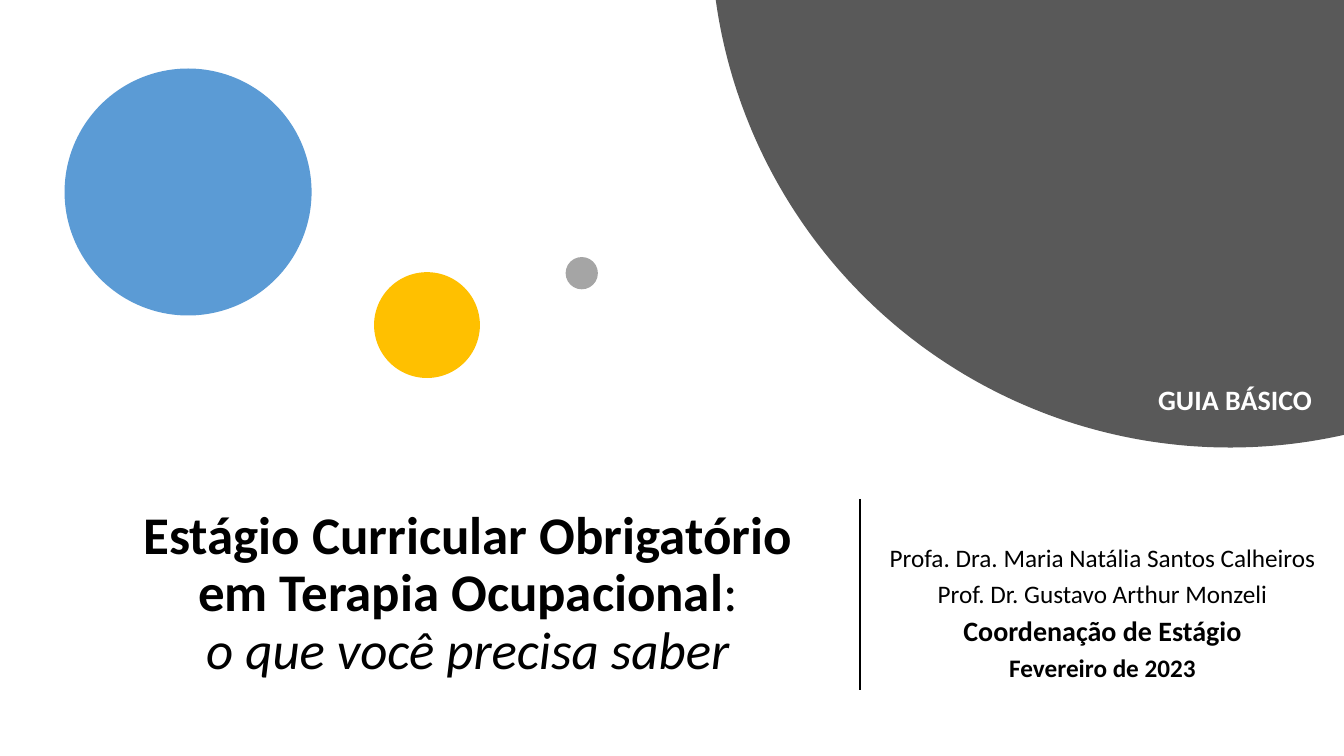
import math
from dataclasses import dataclass, field

import pptx
import pptx.dml.color
import pptx.enum.shapes
import pptx.enum.text
import pptx.oxml.ns
import pptx.shapes.base
import pptx.slide
import pptx.util
from lxml import etree

Inches = pptx.util.Inches
Pt = pptx.util.Pt
Color = pptx.dml.color.RGBColor
Anchor = pptx.enum.text.MSO_ANCHOR
Align = pptx.enum.text.PP_ALIGN


@dataclass(frozen=True)
class Theme:
    font: str = "Calibri"
    black: str = "000000"
    white: str = "FFFFFF"
    blue: str = "5B9BD5"
    gold: str = "FFC000"
    gray: str = "A5A5A5"
    dark: str = "595959"
    title: float = 37.8
    label: float = 20
    body: float = 18
    rule: float = 1.5


THEME = Theme()


@dataclass(frozen=True)
class Dot:
    left: float
    top: float
    size: float
    color: str


@dataclass(frozen=True)
class Run:
    text: str
    size: float
    color: str = THEME.black
    style: dict[str, bool] = field(default_factory=dict)


@dataclass(frozen=True)
class Block:
    left: float
    top: float
    width: float
    height: float
    lines: list[list[Run]]
    frame: dict[str, object]
    para: dict[str, object]


BOLD = {"bold": True}
MIDDLE = {"word_wrap": True, "vertical_anchor": Anchor.MIDDLE}
DOTS = [
    Dot(0.64, 0.68, 2.45, THEME.blue),
    Dot(3.71, 2.7, 1.05, THEME.gold),
    Dot(5.61, 2.55, 0.32, THEME.gray),
]
BLOCKS = [
    Block(
        0.92, 4.95, 7.44, 1.9,
        [[
            Run("Estágio Curricular Obrigatório em Terapia Ocupacional", THEME.title, style=BOLD),
            Run(":", THEME.title),
            Run("\n", THEME.title),
            Run("o que você precisa saber", THEME.title, style={"italic": True}),
        ]],
        MIDDLE | {"margin_left": Inches(0.15), "margin_right": Inches(0.15)},
        {"line_spacing": 0.9},
    ),
    Block(
        8.62, 5.09, 4.63, 2.01,
        [
            [Run("Profa. Dra. Maria Natália Santos Calheiros", THEME.body)],
            [Run("Prof. Dr. Gustavo Arthur Monzeli", THEME.body)],
            [Run("Coordenação de Estágio", THEME.label, style=BOLD)],
            [Run("Fevereiro de 2023", THEME.body, style=BOLD)],
        ],
        MIDDLE,
        {"line_spacing": 0.9, "space_after": Pt(6)},
    ),
    Block(
        10.75, 3.75, 3, 0.44,
        [[Run("GUIA BÁSICO", THEME.label, THEME.white, BOLD)]],
        {"word_wrap": True},
        {},
    ),
]


def apply(target: object, values: dict[str, object]) -> None:
    for name, value in values.items():
        setattr(target, name, value)


def paint(shape: pptx.shapes.base.BaseShape, color: str) -> None:
    shape.shadow.inherit = False
    shape.fill.solid()
    shape.fill.fore_color.rgb = Color.from_string(color)
    shape.line.fill.background()


def draw_dot(slide: pptx.slide.Slide, dot: Dot) -> None:
    box = map(Inches, (dot.left, dot.top, dot.size, dot.size))
    shape = slide.shapes.add_shape(pptx.enum.shapes.MSO_SHAPE.OVAL, *box)
    paint(shape, dot.color)


def draw_disc(slide: pptx.slide.Slide, mid: tuple[float, float], size: float, edge: float) -> None:
    start = math.acos((edge - mid[0]) / size)
    end = math.pi + math.asin(mid[1] / size)
    steps = 120
    turns = [start + (end - start) * step / steps for step in range(steps + 1)]
    arc = [
        (Inches(mid[0] + size * math.cos(turn)), Inches(mid[1] + size * math.sin(turn)))
        for turn in turns
    ]
    form = slide.shapes.build_freeform(Inches(edge), 0)
    form.add_line_segments(arc, close=True)
    paint(form.convert_to_shape(), THEME.dark)


def draw_rule(slide: pptx.slide.Slide, left: float, top: float, base: float) -> None:
    ends = map(Inches, (left, top, left, base))
    rule = slide.shapes.add_connector(pptx.enum.shapes.MSO_CONNECTOR.STRAIGHT, *ends)
    rule.line.color.rgb = Color.from_string(THEME.black)
    rule.line.width = Pt(THEME.rule)
    etree.SubElement(rule._element.spPr, pptx.oxml.ns.qn("a:effectLst"))


def draw_block(slide: pptx.slide.Slide, block: Block) -> None:
    box = map(Inches, (block.left, block.top, block.width, block.height))
    frame = slide.shapes.add_textbox(*box).text_frame
    apply(frame, block.frame)
    for index, line in enumerate(block.lines):
        para = frame.add_paragraph() if index else frame.paragraphs[0]
        apply(para, {"alignment": Align.CENTER} | block.para)
        for item in line:
            if item.text == "\n":
                para.add_line_break()
                continue
            run = para.add_run()
            run.text = item.text
            apply(run.font, {"name": THEME.font, "size": Pt(item.size)} | item.style)
            run.font.color.rgb = Color.from_string(item.color)


def main() -> None:
    deck = pptx.Presentation()
    apply(deck, {"slide_width": Inches(13.33), "slide_height": Inches(7.5)})
    slide = deck.slides.add_slide(deck.slide_layouts[6])
    for dot in DOTS:
        draw_dot(slide, dot)
    draw_disc(slide, (12.2, -0.71), 5.15, 13.33)
    draw_rule(slide, 8.53, 4.95, 6.85)
    for block in BLOCKS:
        draw_block(slide, block)
    deck.save("out.pptx")


if __name__ == "__main__":
    main()
